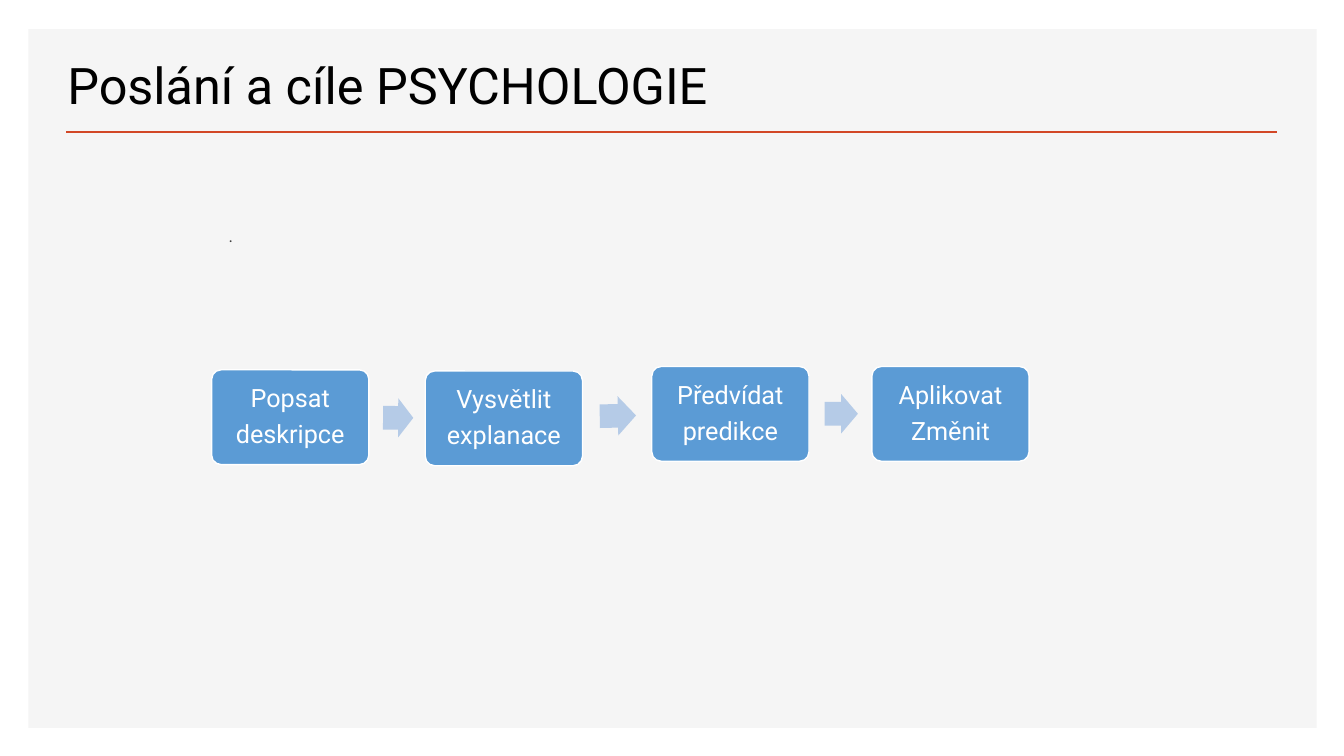
from lxml import etree
from pptx import Presentation
from pptx.dml.color import RGBColor
from pptx.enum import shapes, text
from pptx.oxml.ns import qn
from pptx.util import Pt

PANEL = RGBColor(0xF5, 0xF5, 0xF5)
ACCENT = RGBColor(0xD2, 0x47, 0x26)
STEP_FILL = RGBColor(0x5B, 0x9B, 0xD5)
ARROW_FILL = RGBColor(0xB5, 0xCB, 0xE7)
WHITE = RGBColor(0xFF, 0xFF, 0xFF)
BLACK = RGBColor(0, 0, 0)
GREY = RGBColor(0x40, 0x40, 0x40)

STEP_WIDTH, STEP_HEIGHT = 112.3, 67.7
ARROW_HEIGHT = 28.1

# left, top, lines
STEPS = [
    (151.2, 264.2, ["Popsat", "deskripce"]),
    (303.8, 265, ["Vysvětlit", "explanace"]),
    (465.6, 261.8, ["Předvídat", "predikce"]),
    (622.8, 261.8, ["Aplikovat", "Změnit"]),
]
# left, top, width, rotation
ARROWS = [
    (273.6, 284.4, 21.6, 0.3),
    (428.4, 283, 25.9, 358.8),
    (589, 281.5, 23.8, 0),
]


def write(shape, lines, *, size, color, align=text.PP_ALIGN.LEFT,
          anchor=text.MSO_ANCHOR.TOP, spacing=1.0, after=0, margins=(7.2, 3.6)):
    """Fill a shape with one paragraph per line; margins are (sides, top and bottom)."""
    frame = shape.text_frame
    frame.word_wrap = True
    frame.vertical_anchor = anchor
    frame.margin_left = frame.margin_right = Pt(margins[0])
    frame.margin_top = frame.margin_bottom = Pt(margins[1])
    for index, line in enumerate(lines):
        para = frame.add_paragraph() if index else frame.paragraphs[0]
        para.alignment = align
        para.line_spacing = spacing
        para.space_after = Pt(after)
        span = para.add_run()
        span.text = line
        span.font.name = "Roboto"
        span.font.size = Pt(size)
        span.font.color.rgb = color


def add_text(page, left, top, width, height, lines, **style):
    box = page.shapes.add_textbox(Pt(left), Pt(top), Pt(width), Pt(height))
    write(box, lines, **style)


def add_block(page, kind, left, top, width, height, fill, outline=None):
    block = page.shapes.add_shape(kind, Pt(left), Pt(top), Pt(width), Pt(height))
    block.shadow.inherit = False
    block.fill.solid()
    block.fill.fore_color.rgb = fill
    if outline is None:
        block.line.fill.background()
    else:
        block.line.color.rgb = outline
        block.line.width = Pt(1)
    return block


def add_rule(page, left, right, top):
    rule = page.shapes.add_connector(shapes.MSO_CONNECTOR.STRAIGHT,
                                     Pt(left), Pt(top), Pt(right), Pt(top))
    rule.line.color.rgb = ACCENT
    rule.line.width = Pt(2)
    etree.SubElement(rule.element.spPr, qn("a:effectLst"))


def add_step(page, left, top, lines):
    step = add_block(page, shapes.MSO_SHAPE.ROUNDED_RECTANGLE, left, top,
                     STEP_WIDTH, STEP_HEIGHT, STEP_FILL, WHITE)
    step.adjustments[0] = 0.1
    write(step, lines, size=18, color=WHITE, align=text.PP_ALIGN.CENTER,
          anchor=text.MSO_ANCHOR.MIDDLE, spacing=0.9, after=6.3, margins=(5, 5))


def add_arrow(page, left, top, width, rotation):
    arrow = add_block(page, shapes.MSO_SHAPE.RIGHT_ARROW, left, top,
                      width, ARROW_HEIGHT, ARROW_FILL)
    arrow.adjustments[0] = 0.6
    arrow.adjustments[1] = 0.5
    arrow.rotation = rotation


def main():
    deck = Presentation()
    deck.slide_width, deck.slide_height = Pt(960), Pt(540)
    page = deck.slides.add_slide(deck.slide_layouts[6])

    add_block(page, shapes.MSO_SHAPE.RECTANGLE, 20.2, 20.9, 920.2, 499, PANEL)
    add_rule(page, 47.5, 912.2, 94.3)
    add_text(page, 41, 35.3, 541.4, 50.4, ["Poslání a cíle PSYCHOLOGIE"],
             size=36, color=BLACK, anchor=text.MSO_ANCHOR.BOTTOM)
    add_text(page, 156.2, 158, 648, 366.9, ["."], size=12, color=GREY)
    for step in STEPS:
        add_step(page, *step)
    for arrow in ARROWS:
        add_arrow(page, *arrow)

    deck.save("out.pptx")


if __name__ == "__main__":
    main()
